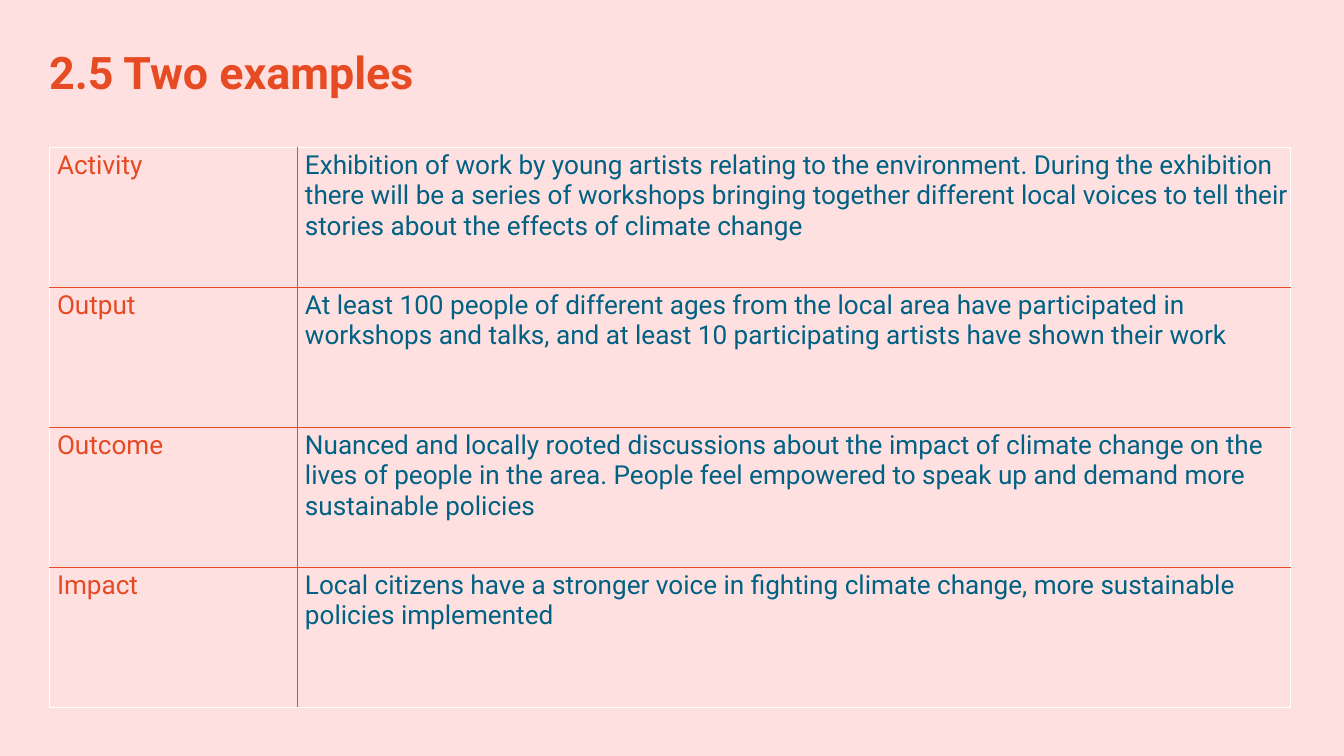
from lxml import etree
from pptx import Presentation
from pptx.dml.color import RGBColor
from pptx.enum.text import MSO_ANCHOR, PP_ALIGN
from pptx.oxml.ns import qn
from pptx.util import Pt

TOP, LEFT = MSO_ANCHOR.TOP, PP_ALIGN.LEFT
PINK = RGBColor(0xFF, 0xE0, 0xE1)
ORANGE = RGBColor(0xE6, 0x4B, 0x23)
LABEL_ORANGE = RGBColor(0xE6, 0x4A, 0x22)
TEAL = RGBColor(0x00, 0x61, 0x82)
FONT = "Roboto"
TITLE_ONLY = 5
COLUMN_WIDTHS = (265.7, 1064.1)
ROW_HEIGHT = 150
CELL_INSET = 2.9
STAGES = (
    ("Activity", "Exhibition of work by young artists relating to the environment. "
     "During the exhibition there will be a series of workshops bringing together "
     "different local voices to tell their stories about the effects of climate change"),
    ("Output", "At least 100 people of different ages from the local area have "
     "participated in workshops and talks, and at least 10 participating artists "
     "have shown their work"),
    ("Outcome", "Nuanced and locally rooted discussions about the impact of climate "
     "change on the lives of people in the area. People feel empowered to speak up "
     "and demand more sustainable policies"),
    ("Impact", "Local citizens have a stronger voice in fighting climate change, "
     "more sustainable policies implemented"),
)


def write_text(frame, text, size, color, bold=False, line_spacing=None, indent=0):
    """Write one left-aligned paragraph into a text frame."""
    para = frame.paragraphs[0]
    para.alignment = LEFT
    if line_spacing:
        para.line_spacing = Pt(line_spacing)
    properties = para._p.get_or_add_pPr()
    properties.set("marL", str(Pt(indent)))
    properties.set("indent", "0")
    span = para.add_run()
    span.text = text
    span.font.name = FONT
    span.font.size = Pt(size)
    span.font.bold = bold
    span.font.color.rgb = color


def add_title(page, text):
    """Place and format the title."""
    box = page.shapes.title
    box.left, box.top, box.width, box.height = Pt(52.6), Pt(48.2), Pt(1334), Pt(56)
    frame = box.text_frame
    frame.margin_left = frame.margin_top = frame.margin_right = frame.margin_bottom = 0
    frame.vertical_anchor = TOP
    frame.word_wrap = True
    write_text(frame, text, 48, ORANGE, bold=True, line_spacing=57)


def add_border(cell, side):
    """Draw a thin line on one side of a cell: L, R, T or B."""
    line = etree.Element(qn(f"a:ln{side}"), w=str(Pt(0.85)))
    fill = etree.SubElement(line, qn("a:solidFill"))
    etree.SubElement(fill, qn("a:srgbClr"), val=str(ORANGE))
    properties = cell._tc.get_or_add_tcPr()
    properties.insert(len(properties.findall("*")) - 1, line)


def format_cell(cell, text, color, sides):
    """Fill in a clear cell with its text and inner borders."""
    cell.fill.background()
    cell.margin_left = cell.margin_right = Pt(CELL_INSET)
    cell.margin_top = cell.margin_bottom = Pt(CELL_INSET)
    cell.vertical_anchor = TOP
    write_text(cell.text_frame, text, 28, color, indent=5)
    for side in sides:
        add_border(cell, side)


def add_stage_table(page, stages):
    """Add the table with a label and a description for each stage."""
    count = len(stages)
    table = page.shapes.add_table(count, len(COLUMN_WIDTHS), Pt(53.2), Pt(157.7),
                                  Pt(sum(COLUMN_WIDTHS)), Pt(count * ROW_HEIGHT)).table
    table.first_row = table.horz_banding = False
    for column, width in zip(table.columns, COLUMN_WIDTHS):
        column.width = Pt(width)
    for index, (label, description) in enumerate(stages):
        table.rows[index].height = Pt(ROW_HEIGHT)
        across = ("T" if index else "") + ("B" if index < count - 1 else "")
        format_cell(table.cell(index, 0), label, LABEL_ORANGE, "R" + across)
        format_cell(table.cell(index, 1), description, TEAL, "L" + across)


def main():
    """Build and save the deck."""
    deck = Presentation()
    deck.slide_width, deck.slide_height = Pt(1440), Pt(810)
    page = deck.slides.add_slide(deck.slide_layouts[TITLE_ONLY])
    page.background.fill.solid()
    page.background.fill.fore_color.rgb = PINK
    add_title(page, "2.5 Two examples")
    add_stage_table(page, STAGES)
    deck.save("out.pptx")


if __name__ == "__main__":
    main()
